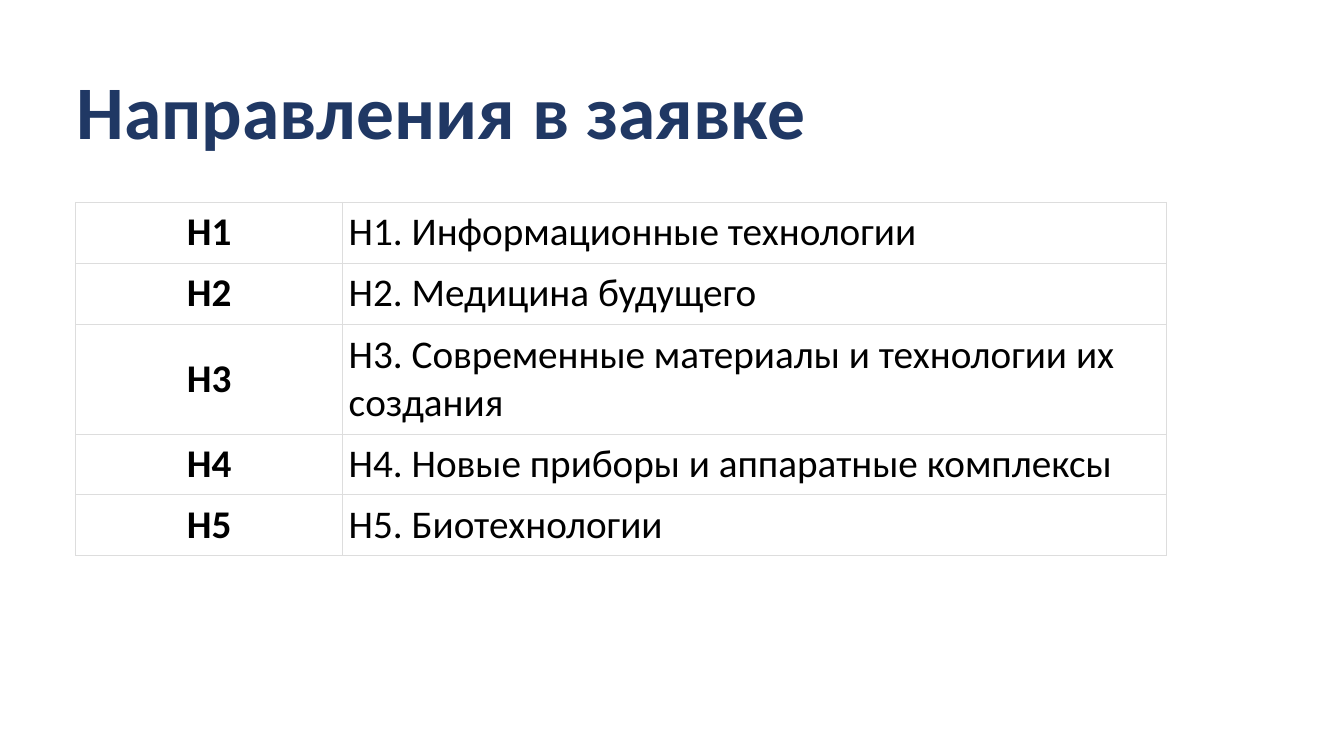
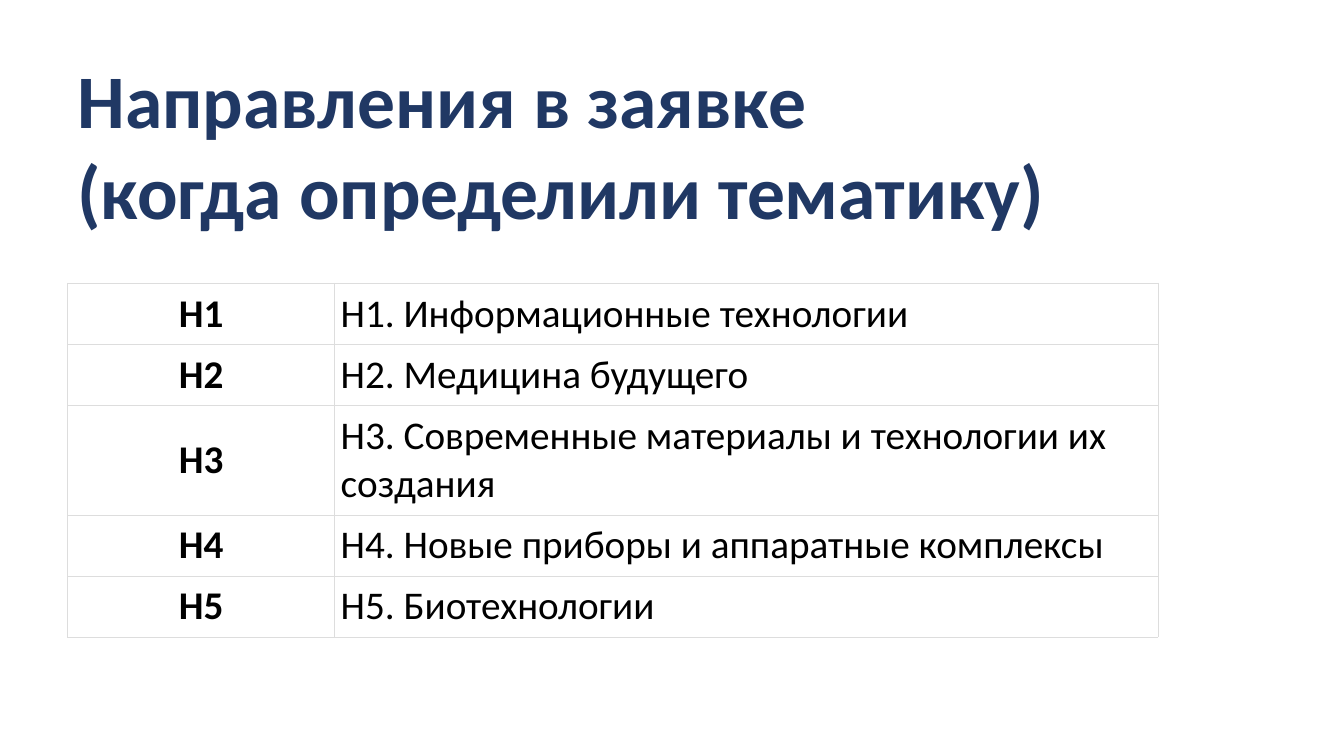
import pptx
import pptx.dml.color
import pptx.enum.text
import pptx.oxml
import pptx.oxml.ns
import pptx.util

PX = 4572  # EMU in one px, 200 px to the inch
SLIDE_SIZE = (2667, 1500)

NAVY = pptx.dml.color.RGBColor(0x20, 0x38, 0x64)
BLACK = pptx.dml.color.RGBColor(0, 0, 0)
WHITE = pptx.dml.color.RGBColor(0xFF, 0xFF, 0xFF)
GRID_GREY = pptx.dml.color.RGBColor(0xDD, 0xDD, 0xDD)

TITLE_FONT = {"name": "Calibri", "size": pptx.util.Pt(54), "bold": True}
CODE_FONT = {"name": "Calibri", "size": pptx.util.Pt(28), "bold": True}
NAME_FONT = CODE_FONT | {"bold": False}

COLUMN_WIDTHS = (530, 1634)
LINE_HEIGHT = 97
CELL_INSET = 12
BORDER_WIDTH = pptx.util.Pt(0.6)

# Code, name and number of text lines of each direction
DIRECTIONS = [
    ("H1", "Информационные технологии", 1),
    ("H2", "Медицина будущего", 1),
    ("H3", "Современные материалы и технологии их создания", 2),
    ("H4", "Новые приборы и аппаратные комплексы", 1),
    ("H5", "Биотехнологии", 1),
]

# Title, title place, and left and top of the table
SLIDES = [
    ("Направления в заявке", (132, 116, 2278, 202), (150, 401)),
    ("Направления в заявке \v(когда определили тематику)",
     (134, 96, 2278, 384), (134, 562)),
]


def px(length):
    return pptx.util.Emu(length * PX)


def set_attributes(target, values):
    for name, value in values.items():
        setattr(target, name, value)


def write_text(frame, text, font, color):
    frame.text = text
    for para in frame.paragraphs:
        for span in para.runs:
            set_attributes(span.font, font)
            span.font.color.rgb = color


def add_title(page, text, place):
    box = page.shapes.add_textbox(*map(px, place))
    box.text_frame.word_wrap = True
    box.text_frame.auto_size = pptx.enum.text.MSO_AUTO_SIZE.SHAPE_TO_FIT_TEXT
    write_text(box.text_frame, text, TITLE_FONT, NAVY)


def add_borders(cell):
    properties = cell._tc.get_or_add_tcPr()
    for side in ("lnL", "lnR", "lnT", "lnB"):
        properties.append(pptx.oxml.parse_xml(
            f'<a:{side} {pptx.oxml.ns.nsdecls("a")} w="{BORDER_WIDTH}">'
            f'<a:solidFill><a:srgbClr val="{GRID_GREY}"/></a:solidFill>'
            f'</a:{side}>'))


def format_cell(cell, text, font, alignment):
    margins = ("margin_left", "margin_right", "margin_top", "margin_bottom")
    set_attributes(cell, dict.fromkeys(margins, px(CELL_INSET)))
    cell.vertical_anchor = pptx.enum.text.MSO_ANCHOR.MIDDLE
    write_text(cell.text_frame, text, font, BLACK)
    cell.text_frame.paragraphs[0].alignment = alignment
    # Borders come before the fill in the cell properties
    add_borders(cell)
    cell.fill.solid()
    cell.fill.fore_color.rgb = WHITE


def add_directions_table(page, left, top):
    heights = [lines * LINE_HEIGHT + 2 * CELL_INSET
               for _, _, lines in DIRECTIONS]
    frame = page.shapes.add_table(
        len(DIRECTIONS), len(COLUMN_WIDTHS), px(left), px(top),
        px(sum(COLUMN_WIDTHS)), px(sum(heights)))
    table = frame.table
    set_attributes(table, {"first_row": False, "horz_banding": False})
    for column, width in zip(table.columns, COLUMN_WIDTHS):
        column.width = px(width)
    align = pptx.enum.text.PP_ALIGN
    for row, height, (code, name, _) in zip(table.rows, heights, DIRECTIONS):
        row.height = px(height)
        format_cell(row.cells[0], code, CODE_FONT, align.CENTER)
        format_cell(row.cells[1], f"{code}. {name}", NAME_FONT, align.LEFT)


def main():
    deck = pptx.Presentation()
    deck.slide_width, deck.slide_height = map(px, SLIDE_SIZE)
    blank = deck.slide_layouts[6]
    for title, title_place, table_corner in SLIDES:
        page = deck.slides.add_slide(blank)
        add_directions_table(page, *table_corner)
        add_title(page, title, title_place)
    deck.save("out.pptx")


if __name__ == "__main__":
    main()
